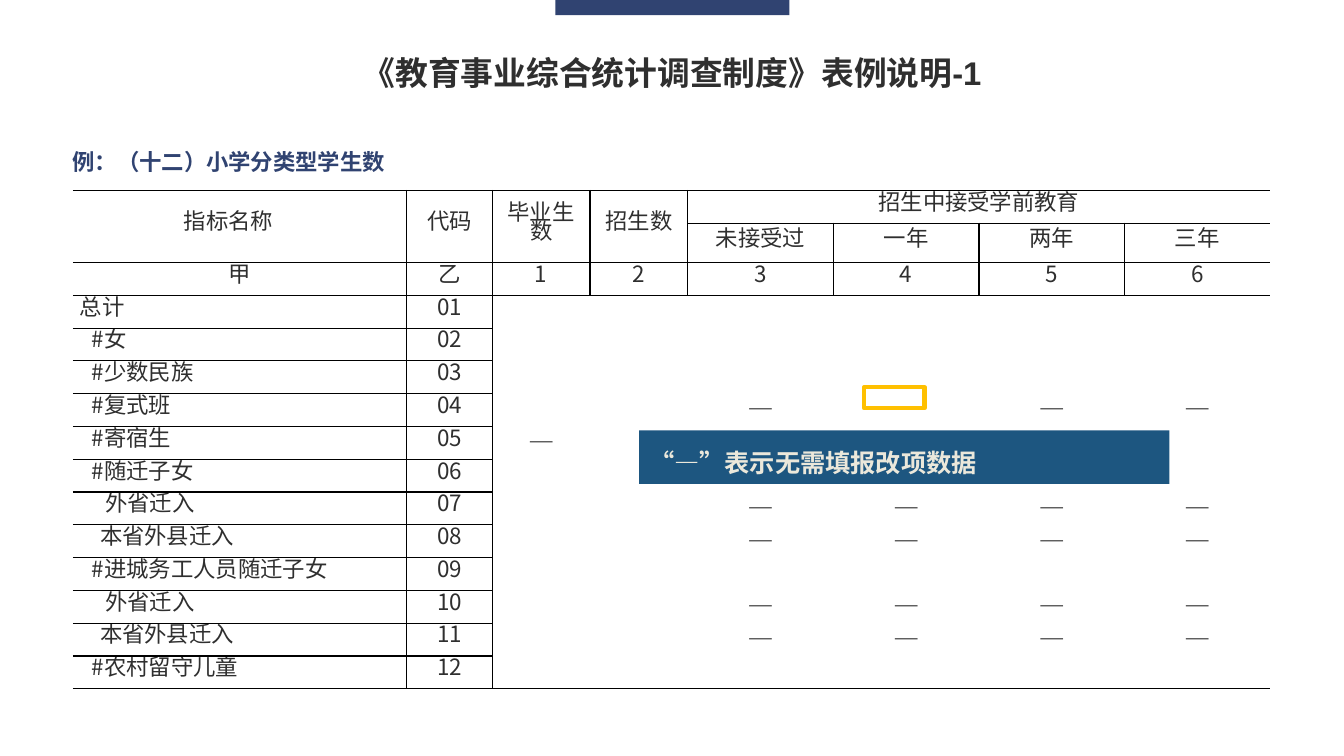
from collections import namedtuple
from lxml.etree import SubElement as Sub
from pptx import Presentation
from pptx.dml.color import RGBColor as RGB
from pptx.enum.shapes import MSO_SHAPE as Shape
from pptx.enum.text import MSO_ANCHOR as Anchor, MSO_AUTO_SIZE as Fit, PP_ALIGN as Align
from pptx.oxml.ns import qn
from pptx.util import Inches, Pt

Theme = namedtuple("Theme", "navy ink band gold cream line title note body head serif sans")
theme = Theme(navy="304371", ink="2F2F2F", band="0A4876", gold="FFC000", cream="EBE8DB",
              line="000000", title=23.4, note=18, body=16,
              head="Arial", serif="Times New Roman", sans="Noto Sans CJK SC")

deck = Presentation()
deck.slide_width, deck.slide_height = Inches(13.33), Inches(7.5)
wide, high = deck.slide_width / 100, deck.slide_height / 100
slide = deck.slides.add_slide(deck.slide_layouts[5])
shapes = slide.shapes


def place(x, y, w, h):
    return int(x * wide), int(y * high), int(w * wide), int(h * high)


def style(run, face, size, color, bold=False):
    font = run.font
    font.name, font.size, font.bold = face, Pt(size), bold
    font.color.rgb = RGB.from_string(color)
    Sub(run._r.get_or_add_rPr(), qn("a:ea")).set("typeface", theme.sans)


bar = shapes.add_shape(Shape.RECTANGLE, *place(41.33, 0, 17.4, 2))
bar.shadow.inherit = False
bar.fill.solid()
bar.fill.fore_color.rgb = RGB.from_string(theme.navy)
bar.line.fill.background()

title = shapes.title
title.left, title.top, title.width, title.height = place(23.33, 7.6, 53.34, 7.33)
frame = title.text_frame
frame.text = "《教育事业综合统计调查制度》表例说明-1"
frame.vertical_anchor = Anchor.TOP
frame.margin_top = 0
frame.auto_size = Fit.NONE
para = frame.paragraphs[0]
para.alignment = Align.CENTER
para.line_spacing = 0.9
style(para.runs[0], theme.head, theme.title, theme.ink, True)

heads = [
    ["指标名称　", "代码", "毕业生数", "招生数", "招生中接受学前教育", "", "", ""],
    ["", "", "", "", "未接受过", "一年", "两年", "三年"],
    ["甲", "乙", "1", "2", "3", "4", "5", "6"],
]
labels = [
    ("总计", 0), ("#女", 0.12), ("#少数民族", 0.12), ("#复式班", 0.12),
    ("#寄宿生", 0.12), ("#随迁子女", 0.12), ("外省迁入", 0.25), ("本省外县迁入", 0.2),
    ("#进城务工人员随迁子女", 0.12), ("外省迁入", 0.25), ("本省外县迁入", 0.2),
    ("#农村留守儿童", 0.12),
]
years = range(4, 8)
dashes = {4: years, 5: [2], 7: years, 8: years, 10: years, 11: years}
rows = heads + [
    [name, f"{code:02}"] + ["—" if col in dashes.get(code, []) else "" for col in range(2, 8)]
    for code, (name, pad) in enumerate(labels, 1)
]
cols = [24.83, 6.38, 7.28, 7.28] + [10.83] * 4
top, last = len(heads), len(rows) - 1

grid = shapes.add_table(len(rows), len(cols), *place(5.42, 25.2, sum(cols), 4.34 * len(rows))).table
grid.first_row = grid.horz_banding = False
for col, share in zip(grid.columns, cols):
    col.width = int(share * wide)
for col in range(4):
    grid.cell(0, col).merge(grid.cell(1, col))
grid.cell(0, 4).merge(grid.cell(0, 7))

for r, texts in enumerate(rows):
    for c, text in enumerate(texts):
        cell = grid.cell(r, c)
        body = r >= top and c >= 2
        label = r >= top and c == 0
        edges = {
            "a:lnL": c > 0 and not (body and c > 2) and not (r == 0 and c > 4),
            "a:lnR": c < 7 and not body and not (r == 0 and c >= 4),
            "a:lnT": not (body and r > top),
            "a:lnB": not (body and r < last),
        }
        props = cell._tc.get_or_add_tcPr()
        for tag, drawn in edges.items():
            edge = Sub(props, qn(tag), w=str(Pt(1)))
            if drawn:
                Sub(Sub(edge, qn("a:solidFill")), qn("a:srgbClr"), val=theme.line)
            else:
                Sub(edge, qn("a:noFill"))
        cell.fill.background()
        cell.vertical_anchor = Anchor.MIDDLE
        cell.margin_top = cell.margin_bottom = 0
        cell.margin_left = Inches(0.07 + (labels[r - top][1] if label else 0))
        cell.margin_right = Inches(0.07)
        para = cell.text_frame.paragraphs[0]
        para.alignment = Align.JUSTIFY if label else Align.CENTER
        para.line_spacing = Pt(14)
        if text.startswith("#"):
            para.text = "#"
            para.add_run().text = text[1:]
        elif text:
            para.text = text
        for run in para.runs:
            plain = run.text == "#" or run.text.isdigit()
            style(run, theme.sans if plain else theme.serif, theme.body, theme.ink)

band = shapes.add_shape(Shape.RECTANGLE, *place(47.56, 56.93, 39.46, 7.07))
band.shadow.inherit = False
band.fill.solid()
band.fill.fore_color.rgb = RGB.from_string(theme.band)
Sub(band._element.spPr.find(".//" + qn("a:srgbClr")), qn("a:alpha"), val="92000")
band.line.fill.background()

note = shapes.add_textbox(*place(47.56, 56.93, 47.04, 6.4)).text_frame
note.word_wrap = True
note.vertical_anchor = Anchor.MIDDLE
note.text = "“—”表示无需填报改项数据"
para = note.paragraphs[0]
para.line_spacing = 1.5
style(para.runs[0], theme.sans, theme.note, theme.cream, True)

mark = shapes.add_shape(Shape.RECTANGLE, *place(64.29, 51.2, 4.5, 2.8))
mark.shadow.inherit = False
mark.fill.background()
mark.line.color.rgb = RGB.from_string(theme.gold)
mark.line.width = Pt(3)

lead = shapes.add_textbox(*place(4.65, 18.93, 25.06, 4.93)).text_frame
lead.word_wrap = False
lead.auto_size = Fit.SHAPE_TO_FIT_TEXT
lead.text = "例：（十二）小学分类型学生数"
style(lead.paragraphs[0].runs[0], theme.sans, theme.body, theme.navy, True)

deck.save("out.pptx")
